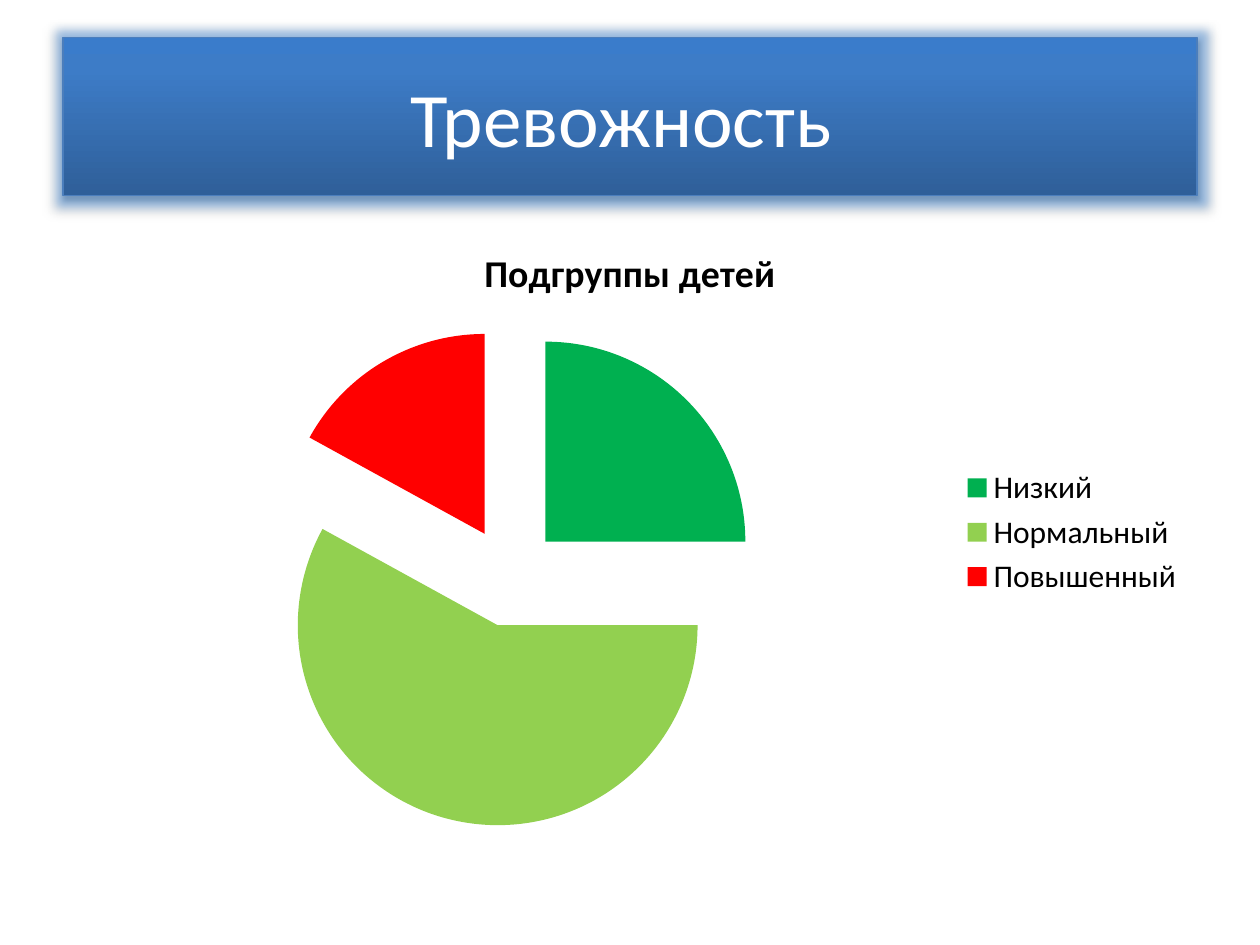
from copy import deepcopy

from lxml import etree
from pptx import Presentation, util as u
from pptx.chart import data as chart_data
from pptx.dml import color
from pptx.enum import chart as charts, text
from pptx.oxml import ns

WIDTH, HEIGHT = 10, 7.5
FONT = "Calibri"
BANNER = (0.05, 0.04, 0.9, 1 / 6)
PIE = (0.05, 0.2333, 0.9, 0.66)
BANNER_STOPS = [(0, "2F5F99"), (0.8, "3D7CC7"), (1, "3A7CCB")]
LEVELS = [("Низкий", 25, "00B050"), ("Нормальный", 58, "92D050"), ("Повышенный", 17, "FF0000")]
EXPLOSION = 25
EFFECTS = f"""<a:effectLst {ns.nsdecls('a')}>
  <a:glow rad="139700"><a:srgbClr val="2A7FDD"><a:alpha val="40000"/></a:srgbClr></a:glow>
  <a:outerShdw blurRad="39370" dist="22860" dir="5400000" rotWithShape="0">
    <a:srgbClr val="000000"><a:alpha val="35000"/></a:srgbClr></a:outerShdw>
</a:effectLst>"""


def rgb(value):
    """Turn a hex string into a colour."""
    return color.RGBColor.from_string(value)


def place(shares):
    """Turn shares of the slide into left, top, width and height."""
    sizes = (WIDTH, HEIGHT, WIDTH, HEIGHT)
    return [u.Inches(round(share * size, 2)) for share, size in zip(shares, sizes)]


def style_font(font, size, ink, bold=False):
    """Set the typeface, size, colour and weight of a font."""
    font.name, font.size, font.bold = FONT, u.Pt(size), bold
    font.color.rgb = rgb(ink)


def write(frame, words, size=18, ink="000000", bold=False):
    """Write one centred paragraph into a text frame."""
    para = frame.paragraphs[0]
    para.alignment = text.PP_ALIGN.CENTER
    span = para.add_run()
    span.text = words
    style_font(span.font, size, ink, bold)


def fill_gradient(box, stops):
    """Fill a shape with colour stops that run from bottom to top."""
    box.fill.gradient()
    box.fill.gradient_angle = 90
    first = box._element.spPr.xpath(".//a:gs")[0]
    for _ in stops[2:]:
        first.addnext(deepcopy(first))
    for stop, (position, shade) in zip(box.fill.gradient_stops, stops):
        stop.position = position
        stop.color.rgb = rgb(shade)


def add_banner(page, shares, words):
    """Format the title placeholder as a glowing gradient banner."""
    box = page.shapes.title
    box.left, box.top, box.width, box.height = place(shares)
    fill_gradient(box, BANNER_STOPS)
    box.line.color.rgb = rgb("4B7EBC")
    box.line.width = u.Pt(0.75)
    box._element.spPr.append(etree.fromstring(EFFECTS))
    box.text_frame.vertical_anchor = text.MSO_ANCHOR.MIDDLE
    write(box.text_frame, words, size=44, ink="FFFFFF")


def add_pie(page, shares, heading):
    """Add the exploded pie with its heading and legend."""
    table = chart_data.CategoryChartData()
    table.categories = [name for name, _, _ in LEVELS]
    table.add_series(heading, [value for _, value, _ in LEVELS])
    chart = page.shapes.add_chart(charts.XL_CHART_TYPE.PIE, *place(shares), table).chart
    style_font(chart.font, 18, "000000")
    write(chart.chart_title.text_frame, heading, size=21.6, bold=True)
    chart.has_legend = True
    chart.legend.position = charts.XL_LEGEND_POSITION.RIGHT
    chart.legend.include_in_layout = False
    plot = chart.plots[0]
    plot.vary_by_categories = True
    series = plot.series[0]
    for index, (_, _, shade) in enumerate(LEVELS):
        fill = series.points[index].format.fill
        fill.solid()
        fill.fore_color.rgb = rgb(shade)
    explosion = etree.Element(ns.qn("c:explosion"), val=str(EXPLOSION))
    series._element.find(ns.qn("c:tx")).addnext(explosion)


def main():
    """Build the slide and save the deck."""
    deck = Presentation()
    deck.slide_width, deck.slide_height = u.Inches(WIDTH), u.Inches(HEIGHT)
    page = deck.slides.add_slide(deck.slide_layouts[5])
    add_banner(page, BANNER, "Тревожность ")
    add_pie(page, PIE, "Подгруппы детей")
    deck.save("out.pptx")


if __name__ == "__main__":
    main()
